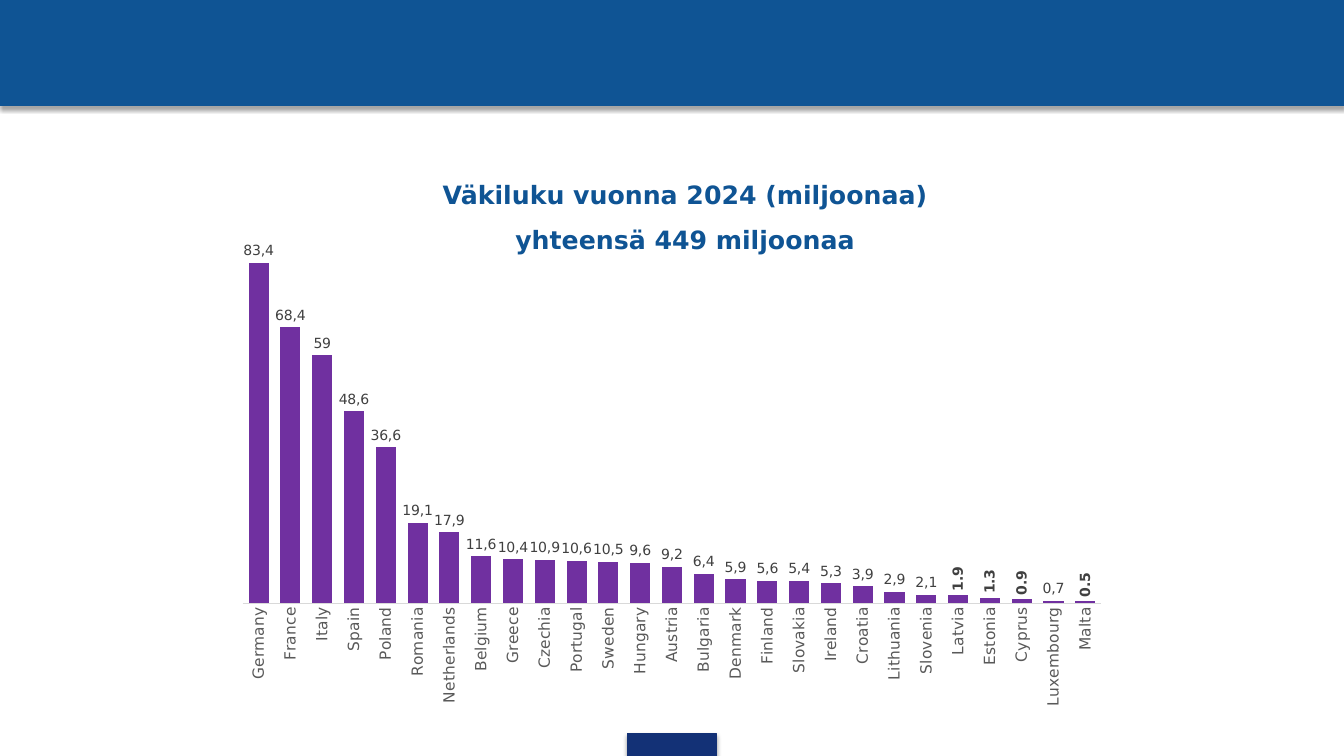
from lxml.etree import SubElement
from pptx import Presentation
from pptx.chart.data import CategoryChartData
from pptx.dml.color import RGBColor
from pptx.enum.chart import XL_CHART_TYPE, XL_LABEL_POSITION, XL_TICK_MARK
from pptx.enum.shapes import MSO_SHAPE
from pptx.enum.text import MSO_ANCHOR, PP_ALIGN
from pptx.oxml import parse_xml
from pptx.oxml.ns import nsdecls, qn
from pptx.util import Inches, Pt

# Country, value, shown label (None: the value itself, bold and upright)
POPULATION = [
    ("Germany", 82.9, "83,4"), ("France", 67.2, "68,4"), ("Italy", 60.4, "59"),
    ("Spain", 46.7, "48,6"), ("Poland", 38, "36,6"), ("Romania", 19.5, "19,1"),
    ("Netherlands", 17.2, "17,9"), ("Belgium", 11.4, "11,6"), ("Greece", 10.7, "10,4"),
    ("Czechia", 10.6, "10,9"), ("Portugal", 10.3, "10,6"), ("Sweden", 10.1, "10,5"),
    ("Hungary", 9.8, "9,6"), ("Austria", 8.8, "9,2"), ("Bulgaria", 7.1, "6,4"),
    ("Denmark", 5.8, "5,9"), ("Finland", 5.5, "5,6"), ("Slovakia", 5.4, "5,4"),
    ("Ireland", 4.8, "5,3"), ("Croatia", 4.1, "3,9"), ("Lithuania", 2.8, "2,9"),
    ("Slovenia", 2, "2,1"), ("Latvia", 1.9, None), ("Estonia", 1.3, None),
    ("Cyprus", 0.9, None), ("Luxembourg", 0.6, "0,7"), ("Malta", 0.5, None),
]
UPRIGHT = "-5400000"


def color(hex_value):
    return RGBColor.from_string(hex_value)


class SlideBuilder:
    face = "DejaVu Sans"
    blue, navy, purple = "0F5494", "133176", "7030A0"
    axis_gray, label_gray, rule_gray = "595959", "404040", "D9D9D9"

    def __init__(self, slide):
        self.slide = slide

    def style(self, font, size, hex_value, bold=False):
        font.name, font.size, font.bold = self.face, Pt(size), bold
        font.color.rgb = color(hex_value)

    def band(self, left, top, width, height, fill):
        band = self.slide.shapes.add_shape(
            MSO_SHAPE.RECTANGLE, Inches(left), Inches(top), Inches(width), Inches(height))
        band.fill.solid()
        band.fill.fore_color.rgb = color(fill)
        band.line.color.rgb = color(fill)
        band.line.width = Pt(0.75)
        band.shadow.inherit = False
        effects = band.element.spPr.find(qn("a:effectLst"))
        shadow = SubElement(effects, qn("a:outerShdw"), blurRad=str(Pt(3.1)),
                            dist=str(Pt(1.8)), dir="5400000", rotWithShape="0")
        black = SubElement(shadow, qn("a:srgbClr"), val="000000")
        SubElement(black, qn("a:alpha"), val="35000")

    def heading(self, left, top, width, height, text):
        box = self.slide.shapes.add_textbox(
            Inches(left), Inches(top), Inches(width), Inches(height))
        frame = box.text_frame
        frame.word_wrap = True
        frame.vertical_anchor = MSO_ANCHOR.MIDDLE
        frame.margin_bottom = Inches(0.35)
        frame.text = text
        paragraph = frame.paragraphs[0]
        paragraph.alignment = PP_ALIGN.CENTER
        paragraph.line_spacing = 1.5
        properties = paragraph._p.get_or_add_pPr()
        properties.set("marL", str(Inches(0.39)))
        properties.set("indent", "0")
        for run in paragraph.runs:
            self.style(run.font, 18, self.blue, bold=True)

    def column_chart(self, left, top, width, height, rows):
        data = CategoryChartData()
        data.categories = [country for country, _, _ in rows]
        data.add_series("Series 1", [value for _, value, _ in rows])
        chart = self.slide.shapes.add_chart(
            XL_CHART_TYPE.COLUMN_CLUSTERED, Inches(left), Inches(top),
            Inches(width), Inches(height), data).chart
        chart.has_legend = False
        chart.has_title = False
        chart.font.name, chart.font.size = "Arial", Pt(10)
        chart.font.color.rgb = color("000000")
        self.columns(chart.plots[0], rows)
        self.axes(chart)
        self.plot_area(chart, x=0.02, y=0.02, w=0.96, h=0.75)

    def columns(self, plot, rows):
        plot.gap_width, plot.overlap = 58, -27
        plot.vary_by_categories = False
        series = plot.series[0]
        series.format.fill.solid()
        series.format.fill.fore_color.rgb = color(self.purple)

        # Upright bold values, replaced by level text where a label is given
        values = series.data_labels
        values.show_value = True
        values.position = XL_LABEL_POSITION.OUTSIDE_END
        self.style(values.font, 10, self.label_gray, bold=True)
        self.rotate(values._element, UPRIGHT)
        for index, (_, _, text) in enumerate(rows):
            if text is None:
                continue
            label = series.points[index].data_label
            label.text_frame.text = text
            label.position = XL_LABEL_POSITION.OUTSIDE_END
            self.style(label.text_frame.paragraphs[0].runs[0].font, 10, self.label_gray)
            label.text_frame._txBody.find(qn("a:bodyPr")).set("rot", "0")

    def axes(self, chart):
        countries, millions = chart.category_axis, chart.value_axis
        countries.major_tick_mark = countries.minor_tick_mark = XL_TICK_MARK.NONE
        countries.format.line.color.rgb = color(self.rule_gray)
        countries.format.line.width = Pt(0.75)
        self.style(countries.tick_labels.font, 11, self.axis_gray)
        self.rotate(countries._element, UPRIGHT)
        millions.minimum_scale, millions.maximum_scale = 0, 90
        millions.has_major_gridlines = False
        millions.visible = False

    def rotate(self, element, angle):
        body = element.find(qn("c:txPr")).find(qn("a:bodyPr"))
        body.set("rot", angle)
        body.set("vert", "horz")

    def plot_area(self, chart, **fractions):
        area = chart._chartSpace.chart.plotArea
        for layout in area.findall(qn("c:layout")):
            area.remove(layout)
        sizes = "".join(f'<c:{key} val="{value}"/>' for key, value in fractions.items())
        area.insert(0, parse_xml(
            f'<c:layout {nsdecls("c")}><c:manualLayout><c:layoutTarget val="inner"/>'
            f'<c:xMode val="edge"/><c:yMode val="edge"/>{sizes}'
            '</c:manualLayout></c:layout>'))


def main():
    deck = Presentation()
    deck.slide_width, deck.slide_height = Inches(13.33), Inches(7.5)
    builder = SlideBuilder(deck.slides.add_slide(deck.slide_layouts[6]))

    # Header band and footer tab
    builder.band(0, 0, 13.33, 1.05, builder.blue)
    builder.band(6.22, 7.28, 0.89, 0.22, builder.navy)

    # Heading and population chart
    builder.heading(2.1, 1.97, 9, 0.51,
                    "Väkiluku vuonna 2024 (miljoonaa)\vyhteensä 449 miljoonaa")
    builder.column_chart(2.23, 2.22, 8.87, 4.89, POPULATION)
    deck.save("out.pptx")


if __name__ == "__main__":
    main()
